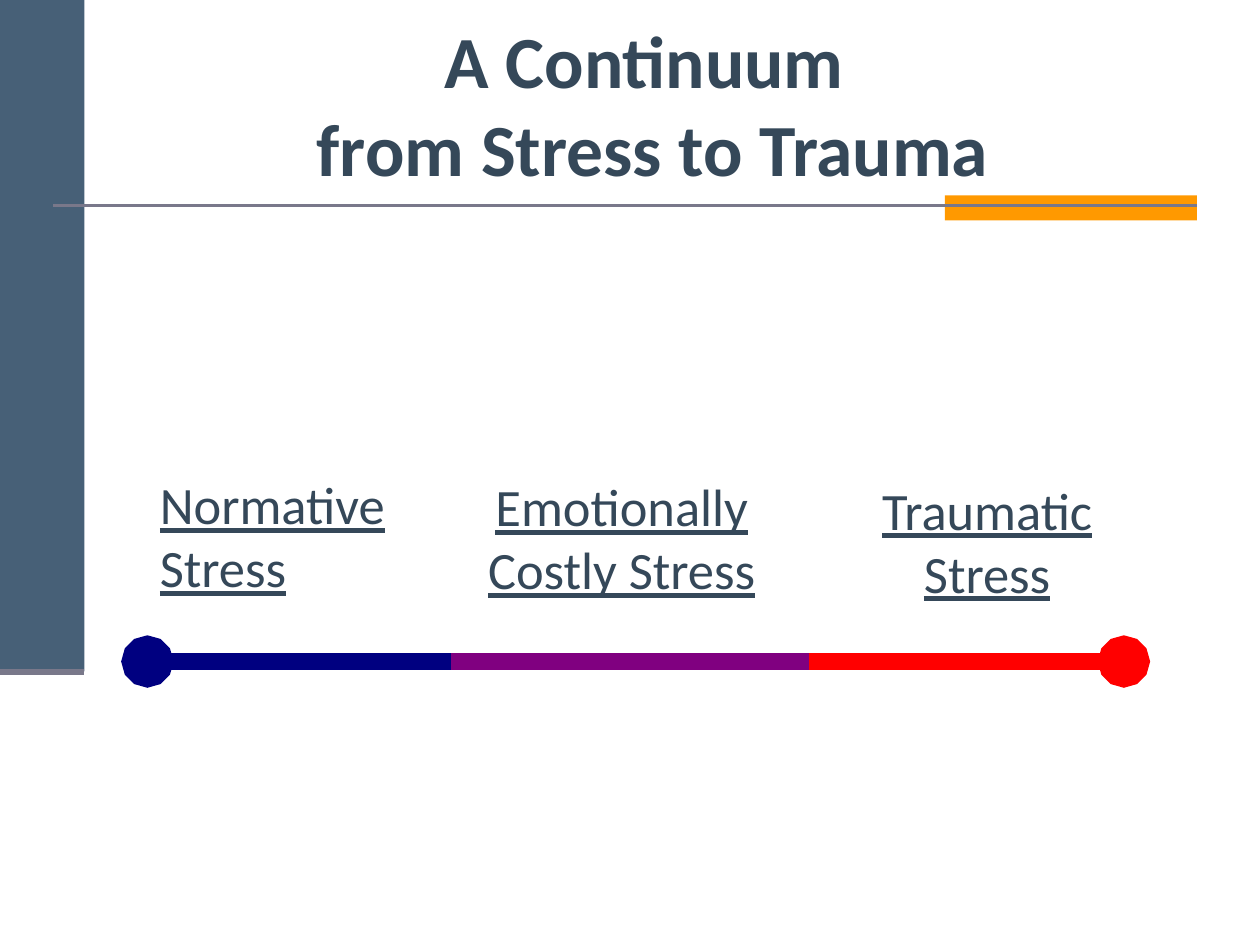
from lxml.etree import SubElement
from pptx import Presentation
from pptx.dml.color import RGBColor
from pptx.enum.shapes import MSO_CONNECTOR, MSO_SHAPE
from pptx.enum.text import MSO_ANCHOR, PP_ALIGN
from pptx.oxml.ns import qn
from pptx.util import Inches, Pt

COLORS = {
    "band": "476077", "accent": "FF9900", "rule": "79788A", "text": "354859",
    "normative": "000080", "costly": "800080", "traumatic": "FF0000",
}


def rgb(name):
    """Return the named palette colour."""
    return RGBColor.from_string(COLORS[name])


def add_block(s, x, y, w, h, color):
    """Add a plain filled rectangle."""
    sp = s.shapes.add_shape(MSO_SHAPE.RECTANGLE, Inches(x), Inches(y), Inches(w), Inches(h))
    sp.shadow.inherit = False
    sp.fill.solid()
    sp.fill.fore_color.rgb = rgb(color)
    sp.line.fill.background()


def add_rule(s, x1, x2, y, color, width, oval_end=None):
    """Add a horizontal line, with an oval on the given end if any."""
    cx = s.shapes.add_connector(MSO_CONNECTOR.STRAIGHT, Inches(x1), Inches(y), Inches(x2), Inches(y))
    cx.line.color.rgb = rgb(color)
    cx.line.width = Pt(width)
    if oval_end:
        SubElement(cx.line._get_or_add_ln(), qn(f"a:{oval_end}"), type="oval")
    SubElement(cx._element.spPr, qn("a:effectLst"))


def add_text(s, box, text, size, align=PP_ALIGN.CENTER, anchor=MSO_ANCHOR.MIDDLE,
             bold=False, underline=False):
    """Add a wrapped text box in the slide's font and text colour."""
    tf = s.shapes.add_textbox(*map(Inches, box)).text_frame
    tf.word_wrap = True
    tf.vertical_anchor = anchor
    p = tf.paragraphs[0]
    p.text = text
    p.alignment = align
    p.font.name = "Calibri"
    p.font.size = Pt(size)
    p.font.bold = bold
    p.font.underline = underline
    p.font.color.rgb = rgb("text")


def add_frame(s, band_w, band_h, rule_y):
    """Add the side band, the accent block and the rule under the title."""
    right = 9.5
    add_block(s, 0, 0, band_w, band_h, "band")
    add_block(s, right - 2, rule_y - 0.08, 2, 0.2, "accent")
    add_rule(s, 0.42, right, rule_y, "rule", 1.5)
    add_rule(s, 0, band_w, band_h, "rule", 3.5)


def add_title(s, box):
    """Add the two-line title."""
    add_text(s, box, "A Continuum \vfrom Stress to Trauma", 42, anchor=MSO_ANCHOR.TOP, bold=True)


def add_continuum(s, y, stops, stages):
    """Add the labelled stages and the coloured line running through the stops."""
    for text, box, align, _, _ in stages:
        add_text(s, box, text, 30, align, underline=True)
    for x1, x2, (_, _, _, color, oval_end) in zip(stops, stops[1:], stages):
        add_rule(s, x1, x2, y, color, 10, oval_end)


def main():
    """Build and save the slide."""
    prs = Presentation()
    prs.slide_width, prs.slide_height = Inches(10), Inches(7.5)
    s = prs.slides.add_slide(prs.slide_layouts[6])
    add_frame(s, 0.67, 5.33, 1.63)
    add_continuum(s, 5.25, (1.17, 3.58, 6.42, 8.92), (
        ("Normative\vStress", (1.17, 3.5, 2.7, 1.5), PP_ALIGN.LEFT, "normative", "headEnd"),
        ("Emotionally Costly Stress", (3.6, 3.64, 2.67, 1.25), PP_ALIGN.CENTER, "costly", None),
        ("Traumatic Stress", (6.42, 3.67, 2.83, 1.25), PP_ALIGN.CENTER, "traumatic", "tailEnd"),
    ))
    add_title(s, (0.93, 0.07, 8.5, 1.25))
    prs.save("out.pptx")


if __name__ == "__main__":
    main()
